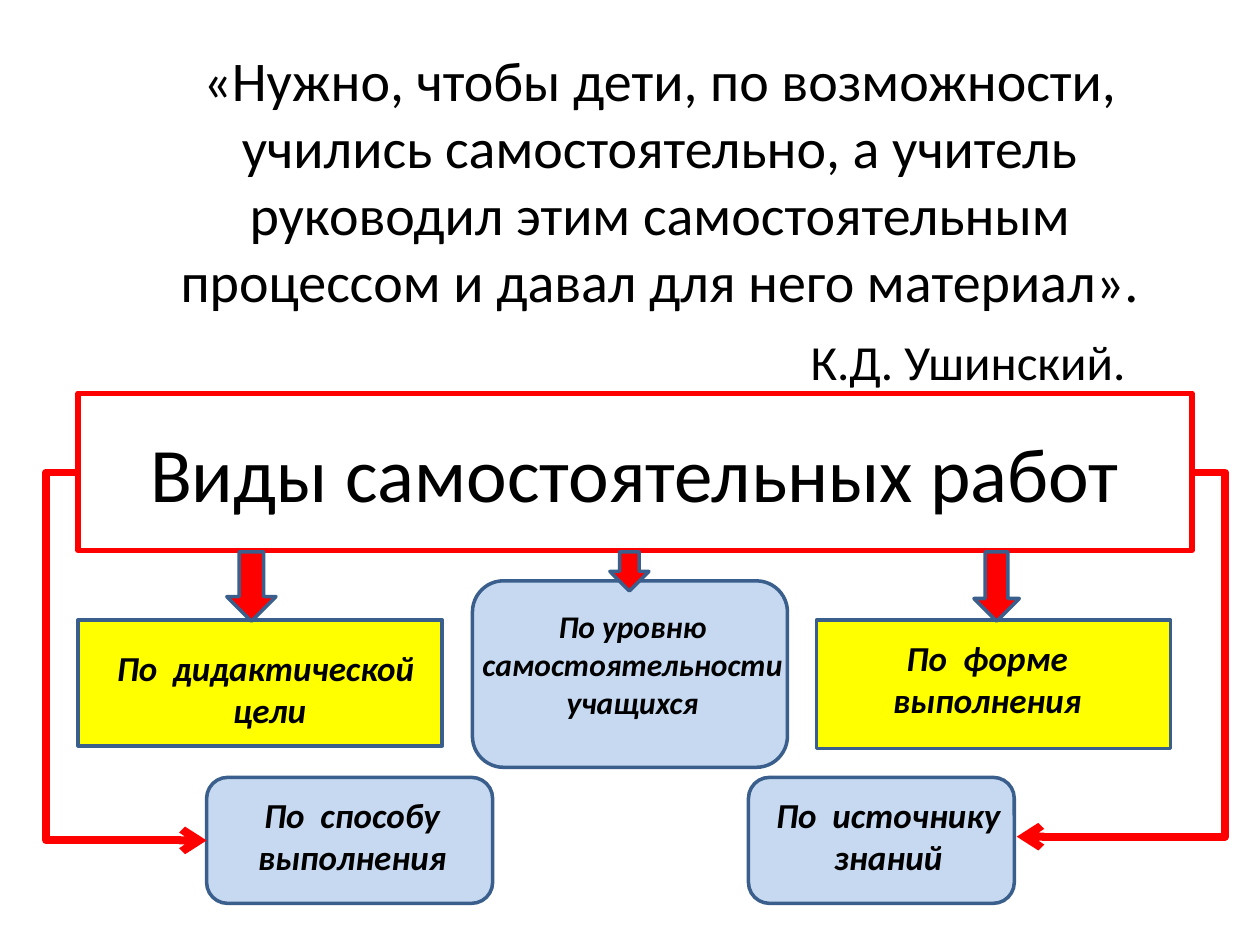
from dataclasses import dataclass

from lxml.etree import SubElement
from pptx import Presentation
from pptx.dml.color import RGBColor
from pptx.enum.shapes import MSO_CONNECTOR as Connector, MSO_SHAPE as Shape
from pptx.enum.text import MSO_ANCHOR as Anchor, PP_ALIGN as Align
from pptx.oxml.ns import qn
from pptx.util import Inches, Pt


@dataclass(frozen=True)
class Theme:
    """Colours, font and type sizes of the slide."""
    font: str = "Calibri"
    black: RGBColor = RGBColor(0, 0, 0)
    red: RGBColor = RGBColor(255, 0, 0)
    yellow: RGBColor = RGBColor(255, 255, 0)
    pale_blue: RGBColor = RGBColor(0xC6, 0xD9, 0xF1)
    outline: RGBColor = RGBColor(0x3A, 0x5F, 0x8C)
    title: int = 44
    quote: int = 32
    author: int = 28
    label: int = 20
    small_label: int = 18


THEME = Theme()
QUOTE = ("«Нужно, чтобы дети, по возможности, учились самостоятельно, а учитель "
         "руководил этим самостоятельным процессом и давал для него материал».")
HEADING = (0.62, 3.12, 8.84, 1.25)
BOXES = [
    (Shape.ROUNDED_RECTANGLE, (5.94, 6.17, 2.11, 1), THEME.pale_blue),
    (Shape.ROUNDED_RECTANGLE, (1.64, 6.17, 2.27, 1), THEME.pale_blue),
    (Shape.RECTANGLE, (6.48, 4.92, 2.81, 1.02), THEME.yellow),
    (Shape.ROUNDED_RECTANGLE, (3.75, 4.61, 2.5, 1.48), THEME.pale_blue),
    (Shape.RECTANGLE, (0.62, 4.92, 2.89, 1), THEME.yellow),
]
LABELS = [
    ((0.62, 5.08, 3.04, 0.77), ["По  дидактической  цели"], THEME.label, True),
    ((3.67, 4.77, 2.7, 1.01), ["По уровню", "самостоятельности", "учащихся"],
     THEME.small_label, False),
    ((6.95, 5, 1.77, 0.77), ["По  форме", "выполнения"], THEME.label, False),
    ((6.02, 6.25, 2.06, 0.77), ["По  источнику", "знаний"], THEME.label, False),
    ((1.93, 6.25, 1.73, 0.77), ["По  способу", "выполнения"], THEME.label, False),
]
ARROWS = [(1.8, 4.38, 0.39, 0.55), (7.73, 4.38, 0.36, 0.55), (4.84, 4.38, 0.31, 0.31)]
ELBOWS = [((9.47, 3.75), (8.07, 6.64), -0.18), ((0.62, 3.75), (1.64, 6.67), -0.25)]


def apply_format(target, values):
    """Set every attribute named in a dict of format values."""
    for name, value in values.items():
        setattr(target, name, value)


def write_paragraph(paragraph, text, size, align=Align.CENTER, **font_values):
    """Fill one paragraph with text in the theme font."""
    paragraph.text = text
    paragraph.alignment = align
    apply_format(paragraph.font, {"name": THEME.font, "size": Pt(size), **font_values})
    paragraph.font.color.rgb = THEME.black


def add_box(slide, kind, place, fill=None, line=THEME.outline, width=2):
    """Add a preset shape with a plain fill and outline."""
    shape = slide.shapes.add_shape(kind, *map(Inches, place))
    shape.shadow.inherit = False
    if fill is None:
        shape.fill.background()
    else:
        shape.fill.solid()
        shape.fill.fore_color.rgb = fill
    shape.line.color.rgb = line
    shape.line.width = Pt(width)
    return shape


def add_heading(slide):
    """Add the framed heading."""
    shape = add_box(slide, Shape.RECTANGLE, HEADING, line=THEME.red, width=3)
    apply_format(shape.text_frame, {"word_wrap": True, "vertical_anchor": Anchor.MIDDLE})
    write_paragraph(shape.text_frame.paragraphs[0], "Виды самостоятельных работ", THEME.title)


def add_quote(slide):
    """Add the quotation and its author."""
    place = map(Inches, (0.55, 0.31, 9, 2.66))
    frame = slide.shapes.add_textbox(*place).text_frame
    frame.word_wrap = True
    quote, author = frame.paragraphs[0], frame.add_paragraph()
    write_paragraph(quote, QUOTE, THEME.quote)
    write_paragraph(author, "К.Д. Ушинский.", THEME.author, Align.RIGHT)
    author.space_before = Pt(10)
    quote._p.get_or_add_pPr().set("marL", str(Inches(0.38)))
    author._p.get_or_add_pPr().set("marR", str(Inches(0.52)))


def add_label(slide, place, lines, size, wrap):
    """Add a bold italic label with one paragraph per line."""
    frame = slide.shapes.add_textbox(*map(Inches, place)).text_frame
    frame.word_wrap = wrap
    for index, line in enumerate(lines):
        paragraph = frame.add_paragraph() if index else frame.paragraphs[0]
        write_paragraph(paragraph, line, size, bold=True, italic=True)


def add_elbow(slide, start, end, bend):
    """Add a bent red arrow whose bend lies outside its ends."""
    connector = slide.shapes.add_connector(Connector.ELBOW, *map(Inches, start + end))
    connector.line.color.rgb = THEME.red
    connector.line.width = Pt(4.5)
    SubElement(connector.line._get_or_add_ln(), qn("a:tailEnd"), type="arrow")
    properties = connector._element.spPr
    SubElement(properties, qn("a:effectLst"))
    guides = properties.find(qn("a:prstGeom")).get_or_add_avLst()
    SubElement(guides, qn("a:gd"), name="adj1", fmla=f"val {round(bend * 100000)}")


def main():
    """Build and save the slide."""
    presentation = Presentation()
    apply_format(presentation, {"slide_width": Inches(10), "slide_height": Inches(7.5)})
    slide = presentation.slides.add_slide(presentation.slide_layouts[6])
    for kind, place, fill in BOXES:
        add_box(slide, kind, place, fill)
    add_heading(slide)
    add_quote(slide)
    for label in LABELS:
        add_label(slide, *label)
    for place in ARROWS:
        add_box(slide, Shape.DOWN_ARROW, place, THEME.red)
    for elbow in ELBOWS:
        add_elbow(slide, *elbow)
    presentation.save("out.pptx")


if __name__ == "__main__":
    main()
